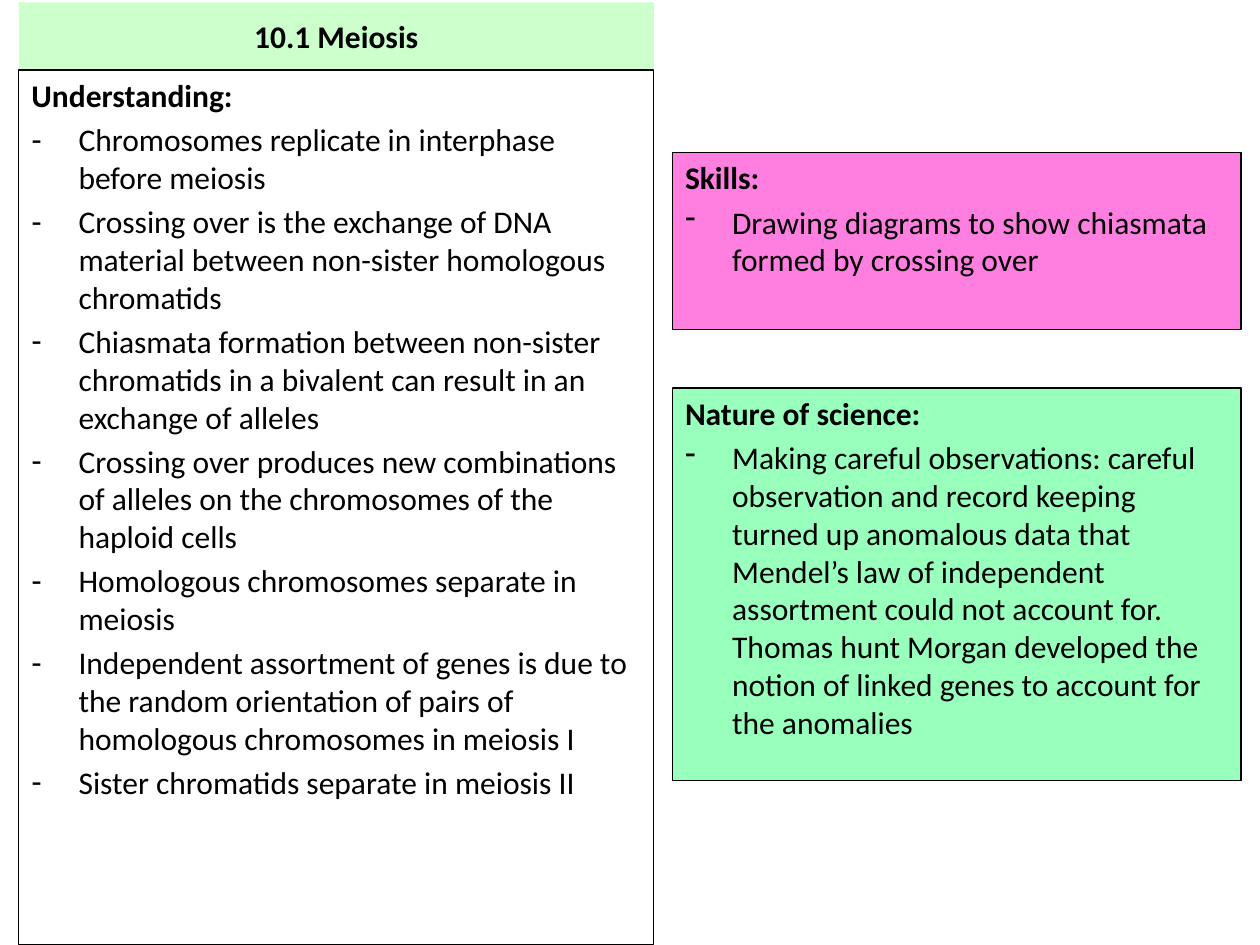
from dataclasses import dataclass

from lxml.etree import SubElement
from pptx import Presentation
from pptx.dml.color import RGBColor
from pptx.enum.text import MSO_ANCHOR, MSO_AUTO_SIZE, PP_ALIGN
from pptx.oxml.ns import qn
from pptx.util import Cm, Pt


@dataclass(frozen=True)
class Theme:
    font: str = "Calibri"
    size: Pt = Pt(18)
    space_before: Pt = Pt(3.6)
    border: Pt = Pt(0.75)
    ink: RGBColor = RGBColor(0x00, 0x00, 0x00)
    title_fill: RGBColor = RGBColor(0xCC, 0xFF, 0xCC)
    skills_fill: RGBColor = RGBColor(0xFF, 0x7F, 0xE1)
    nature_fill: RGBColor = RGBColor(0x98, 0xFF, 0xBC)


THEME = Theme()
INDENT = Cm(0.95)
LEFT, LEFT_WIDTH = Cm(0.38), Cm(12.8)
RIGHT, RIGHT_WIDTH = Cm(13.56), Cm(11.46)


def style_font(paragraph, bold):
    paragraph.font.name = THEME.font
    paragraph.font.size = THEME.size
    paragraph.font.bold = bold
    paragraph.font.color.rgb = THEME.ink


def fill_panel(panel, heading, points):
    """Outline the panel and write a bold heading above dashed points."""
    panel.line.color.rgb = THEME.ink
    panel.line.width = THEME.border
    frame = panel.text_frame
    frame.word_wrap = True
    frame.auto_size = MSO_AUTO_SIZE.NONE
    frame.text = "\n".join([heading, *points])
    for number, paragraph in enumerate(frame.paragraphs):
        is_point = number > 0
        paragraph.space_before = THEME.space_before
        properties = paragraph._p.get_or_add_pPr()
        properties.set("marL", str(INDENT if is_point else 0))
        properties.set("indent", str(-INDENT if is_point else 0))
        if is_point:
            SubElement(properties, qn("a:buChar")).set("char", "-")
        else:
            SubElement(properties, qn("a:buNone"))
        style_font(paragraph, bold=not is_point)


presentation = Presentation()
presentation.slide_width, presentation.slide_height = Cm(25.4), Cm(19.05)
slide = presentation.slides.add_slide(presentation.slide_layouts[1])

# Topic title
title = slide.shapes.title
title.left, title.top, title.width, title.height = LEFT, Cm(0.05), LEFT_WIDTH, Cm(1.35)
title.fill.solid()
title.fill.fore_color.rgb = THEME.title_fill
title.text_frame.text = "10.1 Meiosis"
title.text_frame.auto_size = MSO_AUTO_SIZE.NONE
title.text_frame.vertical_anchor = MSO_ANCHOR.MIDDLE
title.text_frame.paragraphs[0].alignment = PP_ALIGN.CENTER
style_font(title.text_frame.paragraphs[0], bold=True)

# Understanding
understanding = slide.placeholders[1]
understanding.left, understanding.top = LEFT, Cm(1.41)
understanding.width, understanding.height = LEFT_WIDTH, Cm(17.63)
fill_panel(understanding, "Understanding:", [
    "Chromosomes replicate in interphase before meiosis",
    "Crossing over is the exchange of DNA material between non-sister homologous chromatids",
    "Chiasmata formation between non-sister chromatids in a bivalent can result in an "
    "exchange of alleles",
    "Crossing over produces new combinations of alleles on the chromosomes of the haploid cells",
    "Homologous chromosomes separate in meiosis",
    "Independent assortment of genes is due to the random orientation of pairs of "
    "homologous chromosomes in meiosis I",
    "Sister chromatids separate in meiosis II",
])

# Skills and nature of science
side_panels = [
    (Cm(3.07), Cm(3.58), THEME.skills_fill, "Skills:",
     "Drawing diagrams to show chiasmata formed by crossing over"),
    (Cm(7.82), Cm(7.92), THEME.nature_fill, "Nature of science:",
     "Making careful observations: careful observation and record keeping turned up "
     "anomalous data that Mendel’s law of independent assortment could not account for. "
     "Thomas hunt Morgan developed the notion of linked genes to account for the anomalies"),
]
for top, height, color, heading, point in side_panels:
    panel = slide.shapes.add_textbox(RIGHT, top, RIGHT_WIDTH, height)
    panel.fill.solid()
    panel.fill.fore_color.rgb = color
    fill_panel(panel, heading, [point])

presentation.save("out.pptx")
